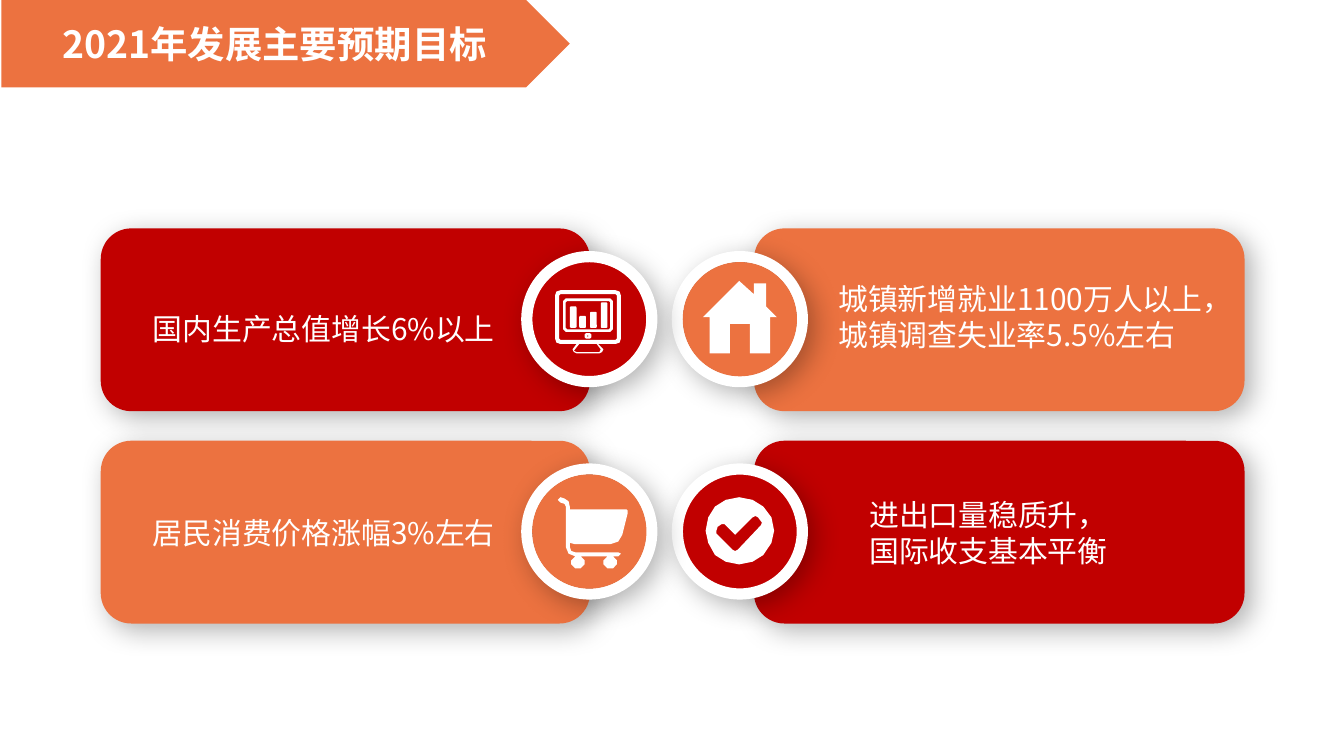
from dataclasses import dataclass

from lxml import etree
from pptx import Presentation
from pptx.dml.color import RGBColor
from pptx.enum.shapes import MSO_SHAPE
from pptx.enum.text import MSO_ANCHOR, MSO_AUTO_SIZE, PP_ALIGN
from pptx.oxml.ns import qn
from pptx.shapes.autoshape import Shape
from pptx.slide import Slide
from pptx.text.text import TextFrame
from pptx.util import Pt

PX = 9144
RED = RGBColor(0xC1, 0x00, 0x00)
ORANGE = RGBColor(0xEC, 0x72, 0x40)
GRAY = RGBColor(0x40, 0x40, 0x40)
WHITE = RGBColor(0xFF, 0xFF, 0xFF)
FONT = "Noto Sans CJK SC"

Box = tuple[int, int, int, int]
Points = tuple[tuple[int, int], ...]


@dataclass(frozen=True)
class Part:
    box: Box
    tone: RGBColor = WHITE
    kind: MSO_SHAPE = MSO_SHAPE.ROUNDED_RECTANGLE
    curve: int = 0


@dataclass(frozen=True)
class Poly:
    loops: tuple[Points, ...]


@dataclass(frozen=True)
class Card:
    col: int
    row: int
    tone: RGBColor
    area: Box
    lines: tuple[str, ...]
    icon: tuple[Part | Poly, ...]
    align: PP_ALIGN = PP_ALIGN.LEFT
    pitch: float = 1.0


def rim(left: int, top: int, wide: int, tall: int, cut: int) -> Points:
    right, base = left + wide, top + tall
    return ((left + cut, top), (right - cut, top), (right, top + cut),
            (right, base - cut), (right - cut, base), (left + cut, base),
            (left, base - cut), (left, top + cut))


def paint(shape: Shape, tone: RGBColor) -> None:
    shape.shadow.inherit = False
    shape.fill.solid()
    shape.fill.fore_color.rgb = tone
    shape.line.fill.background()


def draw_part(slide: Slide, part: Part) -> Shape:
    shape = slide.shapes.add_shape(part.kind, *(n * PX for n in part.box))
    paint(shape, part.tone)
    if part.curve:
        shape.adjustments[0] = part.curve / min(part.box[2:])
    return shape


def draw_poly(slide: Slide, poly: Poly) -> None:
    path = slide.shapes.build_freeform(*poly.loops[0][0], scale=PX)
    for i, (first, *rest) in enumerate(poly.loops):
        if i:
            path.move_to(*first)
        path.add_line_segments(rest, close=True)
    paint(path.convert_to_shape(), WHITE)


def add_shade(shape: Shape) -> None:
    effects = shape._element.spPr.find(qn("a:effectLst"))
    shade = etree.SubElement(effects, qn("a:outerShdw"), {
        "blurRad": str(Pt(15)), "dist": str(Pt(5)), "dir": "2700000",
        "algn": "tl", "rotWithShape": "0"})
    color = etree.SubElement(shade, qn("a:srgbClr"), val="000000")
    etree.SubElement(color, qn("a:alpha"), val="30000")


def write(frame: TextFrame, lines: tuple[str, ...], size: int, bold: bool,
          align: PP_ALIGN, pitch: float = 1.0) -> None:
    frame.word_wrap = True
    style = {"name": FONT, "size": Pt(size), "bold": bold}
    for i, line in enumerate(lines):
        para = frame.add_paragraph() if i else frame.paragraphs[0]
        para.alignment = align
        para.line_spacing = pitch
        run = para.add_run()
        run.text = line
        for key, value in style.items():
            setattr(run.font, key, value)
        run.font.color.rgb = WHITE
        etree.SubElement(run._r.get_or_add_rPr(), qn("a:ea"), typeface=FONT)


def draw_card(slide: Slide, card: Card) -> None:
    top, left = 170 + 158 * card.row, 392 + 112 * card.col
    warm = card.tone == ORANGE
    panel = draw_part(slide, Part((75 + 486 * card.col, top, 364 + card.col, 136),
                                  card.tone))
    ring = draw_part(slide, Part((left, top + 21, 93, 93),
                                 GRAY if warm else RED, MSO_SHAPE.OVAL))
    ring.line.color.rgb = WHITE
    ring.line.width = Pt(6)
    for shape in (panel, ring):
        add_shade(shape)
    if warm:
        draw_part(slide, Part((left + 4, top + 25, 85, 85), ORANGE, MSO_SHAPE.OVAL))
    frame = slide.shapes.add_textbox(*(n * PX for n in card.area)).text_frame
    write(frame, card.lines, 16, False, card.align, card.pitch)
    frame.auto_size = MSO_AUTO_SIZE.SHAPE_TO_FIT_TEXT
    for item in card.icon:
        if isinstance(item, Poly):
            draw_poly(slide, item)
        else:
            draw_part(slide, item)


CHECK = (
    Poly((
        ((550, 370), (560, 372), (568, 377), (574, 385), (576, 395),
         (574, 404), (568, 413), (560, 418), (550, 420), (540, 418),
         (532, 413), (527, 404), (525, 395), (527, 385), (532, 377), (540, 372)),
        ((533, 395), (534, 392), (537, 390), (539, 390), (547, 398),
         (560, 385), (562, 384), (564, 385), (567, 389), (566, 391),
         (549, 409), (547, 410), (545, 409), (533, 397)))),
)
HOUSE = (
    Poly((((570, 228), (570, 211), (561, 211), (561, 219), (550, 209),
           (523, 236), (528, 236), (528, 263), (543, 263), (543, 241),
           (558, 241), (558, 263), (573, 263), (573, 236), (578, 236)),)),
)
SCREEN = (
    Poly((
        ((417, 216), (458, 216), (461, 217), (462, 220), (462, 252),
         (461, 255), (458, 256), (445, 256), (449, 260), (448, 262),
         (446, 263), (429, 263), (427, 262), (426, 260), (429, 256),
         (417, 256), (414, 255), (413, 252), (413, 220), (414, 217)),
        ((431, 256), (444, 256), (447, 260), (446, 262), (429, 262), (427, 261)),
        rim(416, 219, 43, 34, 1))),
    Poly((rim(419, 222, 37, 25, 2), rim(421, 224, 33, 21, 1))),
    Poly((rim(435, 248, 5, 4, 1), ((437, 249), (438, 250), (437, 251)))),
    *(Part((left, 244 - tall, 5, tall), curve=1)
      for left, tall in ((431, 9), (447, 19), (439, 12), (424, 16))),
)
CART = (
    Poly((((415, 372), (417, 370), (420, 371), (423, 373), (424, 377),
           (424, 379), (466, 379), (467, 380), (467, 382), (463, 398),
           (460, 403), (454, 405), (428, 405), (424, 404), (424, 407),
           (425, 410), (428, 411), (460, 411), (462, 412), (460, 414),
           (428, 414), (423, 412), (421, 407), (421, 377), (420, 375),
           (417, 374)),
          *(rim(left, 414, 10, 9, 3) for left in (425, 449)))),
)

CARDS = (
    Card(1, 1, RED, (637, 365, 214, 64),
         ("进出口量稳质升，", "国际收支基本平衡"), CHECK),
    Card(1, 0, ORANGE, (614, 204, 294, 64),
         ("城镇新增就业1100万人以上，城镇调查失业率5.5%左右",), HOUSE),
    Card(0, 0, RED, (86, 213, 310, 50),
         ("国内生产总值增长6%以上",), SCREEN, PP_ALIGN.CENTER, 1.5),
    Card(0, 1, ORANGE, (86, 378, 310, 37),
         ("居民消费价格涨幅3%左右",), CART, PP_ALIGN.CENTER),
)


def main() -> None:
    deck = Presentation()
    deck.slide_width, deck.slide_height = 1000 * PX, 1125 * PX // 2
    slide = deck.slides.add_slide(deck.slide_layouts[6])
    title = draw_part(slide, Part((1, 0, 423, 65), ORANGE, MSO_SHAPE.PENTAGON))
    title.text_frame.vertical_anchor = MSO_ANCHOR.MIDDLE
    write(title.text_frame, ("2021年发展主要预期目标",), 20, True, PP_ALIGN.CENTER)
    for card in CARDS:
        draw_card(slide, card)
    deck.save("out.pptx")


if __name__ == "__main__":
    main()
